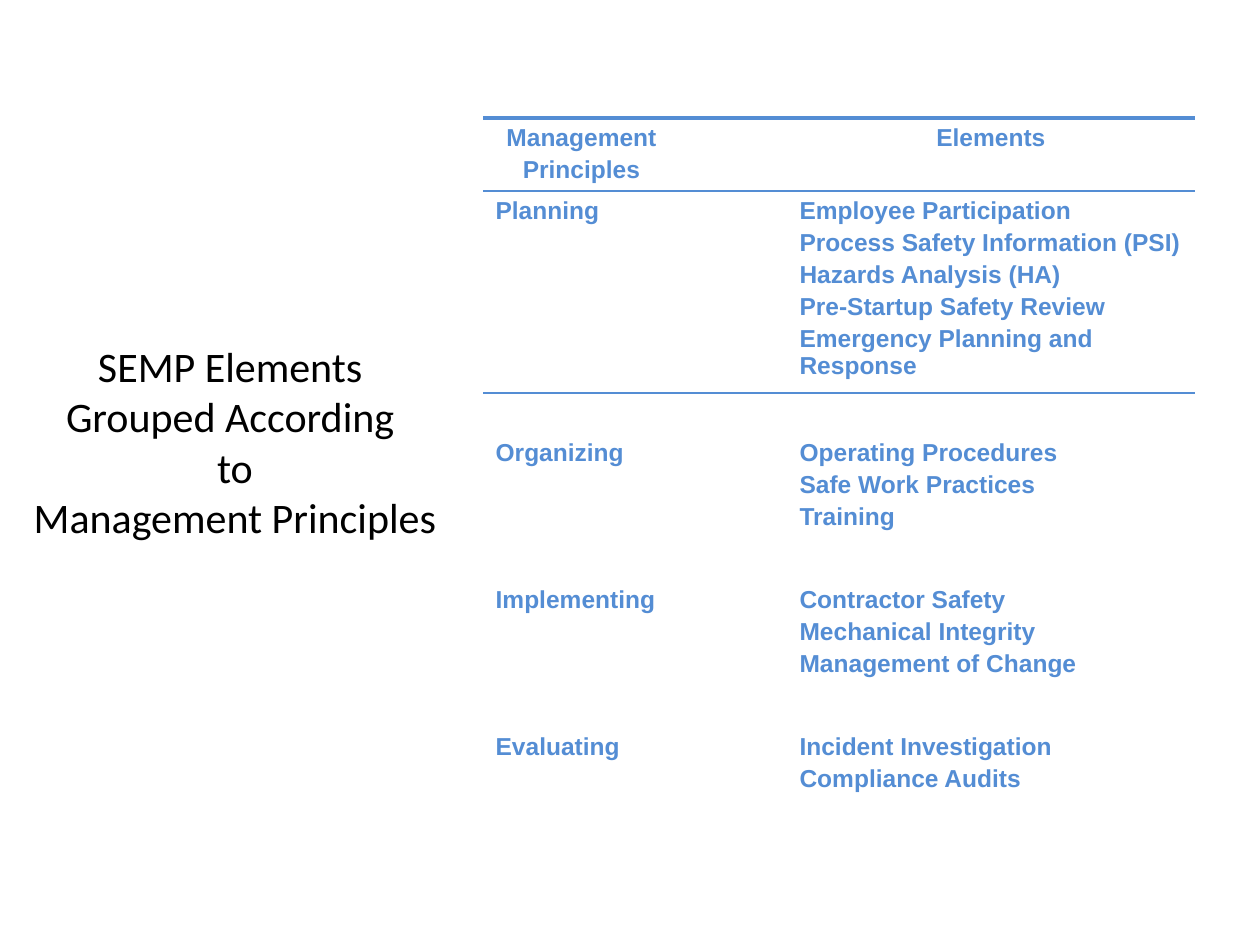
from typing import NamedTuple

from lxml import etree
from pptx import Presentation
from pptx import util as u
from pptx.dml.color import RGBColor
from pptx.enum import text
from pptx.oxml import ns

BLUE = RGBColor(0x54, 0x8D, 0xD4)
BLACK = RGBColor(0, 0, 0)
SCALE = 914400 / 126
PLAIN = "{2D5ABB26-0587-4C30-8999-92F81FD0307C}"
WIDTHS = (197, 107, 408)
HEAD, GAP = 73, 40
TITLE = ("SEMP Elements ", "Grouped According ", "to\vManagement Principles")


class Group(NamedTuple):
    name: str
    items: tuple[str, ...]
    height: int


GROUPS = (
    Group("Planning", ("Employee Participation", "Process Safety Information (PSI)",
                       "Hazards Analysis (HA)", "Pre-Startup Safety Review",
                       "Emergency Planning and Response"), 202),
    Group("Organizing", ("Operating Procedures", "Safe Work Practices", "Training"), 107),
    Group("Implementing", ("Contractor Safety", "Mechanical Integrity",
                           "Management of Change"), 107),
    Group("Evaluating", ("Incident Investigation", "Compliance Audits"), 73),
)


def px(n: int) -> int:
    return round(n * SCALE)


def style(font, name: str, size: int, color: RGBColor, bold: bool) -> None:
    font.name, font.size, font.bold = name, u.Pt(size), bold
    font.color.rgb = color


def write(frame, lines: tuple[str, ...], name: str, size: int, color: RGBColor,
          bold: bool = False, center: bool = False, space: float = 0) -> None:
    """Give each line its own paragraph; a vertical tab breaks within one."""
    for i, line in enumerate(lines):
        para = frame.add_paragraph() if i else frame.paragraphs[0]
        para.alignment = text.PP_ALIGN.CENTER if center else text.PP_ALIGN.LEFT
        para.space_before = u.Pt(space if i else 0)
        for j, part in enumerate(line.split("\v")):
            if j:
                para.add_line_break()
            run = para.add_run()
            run.text = part
            style(run.font, name, size, color, bold)


def fill(cell, lines: tuple[str, ...], center: bool = False) -> None:
    cell.fill.background()
    if lines:
        write(cell.text_frame, lines, "Arial", 14, BLUE, True, center, 2.5)
    else:
        # An empty cell must not stretch its row.
        cell.margin_top = cell.margin_bottom = 0


def rule(cell, **sides: float) -> None:
    """Draw borders, given as side=points in the order L, R, T, B."""
    props = cell._tc.get_or_add_tcPr()
    for i, (side, width) in enumerate(sides.items()):
        line = etree.Element(ns.qn(f"a:ln{side}"), w=str(u.Pt(width)))
        solid = etree.SubElement(line, ns.qn("a:solidFill"))
        etree.SubElement(solid, ns.qn("a:srgbClr"), val=str(BLUE))
        props.insert(i, line)


def add_title(slide) -> None:
    title = slide.shapes.title
    title.left, title.top, title.width, title.height = map(px, (0, 189, 470, 504))
    frame = title.text_frame
    frame.auto_size = text.MSO_AUTO_SIZE.NONE
    frame.word_wrap = False
    frame.vertical_anchor = text.MSO_ANCHOR.MIDDLE
    write(frame, TITLE, "Calibri", 24, BLACK, center=True)


def add_grid(slide) -> None:
    rows = [(HEAD, ("Management", "Principles"), ("Elements",))]
    for i, group in enumerate(GROUPS):
        if i:
            rows.append((GAP, (), ()))
        rows.append((group.height, (group.name,), group.items))
    high = sum(row[0] for row in rows)
    grid = slide.shapes.add_table(len(rows), len(WIDTHS), px(483), px(118),
                                  px(sum(WIDTHS)), px(high)).table
    grid.first_row = grid.horz_banding = False
    grid._tbl.tblPr.find(ns.qn("a:tableStyleId")).text = PLAIN
    for col, width in zip(grid.columns, WIDTHS):
        col.width = px(width)
    for i, (height, left, right) in enumerate(rows):
        grid.rows[i].height = px(height)
        for j, lines in enumerate((left, (), right)):
            fill(grid.cell(i, j), lines, center=i == 0)
    for j in range(len(WIDTHS)):
        rule(grid.cell(0, j), T=2.25, B=1)
        rule(grid.cell(1, j), T=1)


def main() -> None:
    deck = Presentation()
    deck.slide_width, deck.slide_height = px(1260), px(945)
    slide = deck.slides.add_slide(deck.slide_layouts[5])
    add_title(slide)
    add_grid(slide)
    deck.save("out.pptx")


if __name__ == "__main__":
    main()
